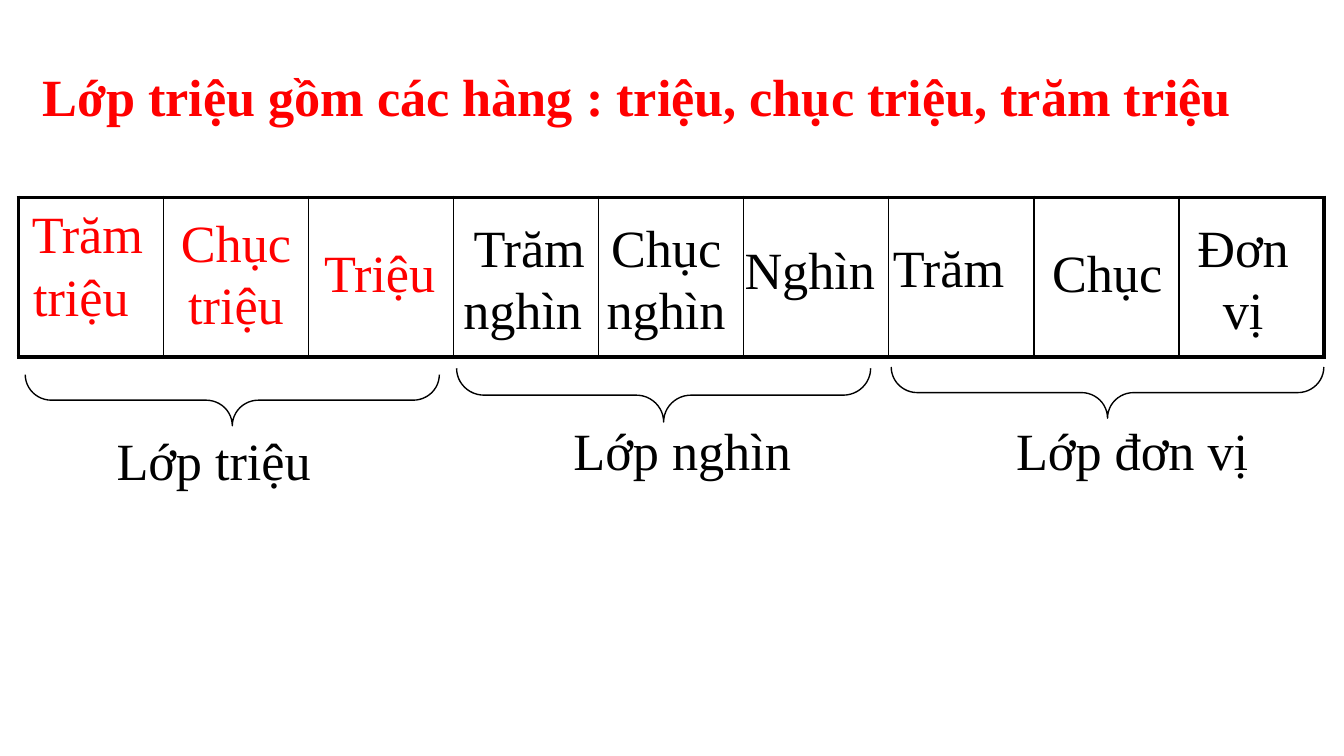
from lxml import etree
from pptx import Presentation, util as u
from pptx.dml.color import RGBColor
from pptx.enum import shapes, text
from pptx.oxml import ns

PX = 5715  # EMU per px, 160 px to the inch
FONT = "Times New Roman"
COLORS = {"highlight": "FF0000", "ink": "000000"}
LINE_HEIGHT, TWO_LINES = 91, 166


def px(*lengths):
    return [u.Emu(length * PX) for length in lengths]


def add_words(slide, box, words, color="ink", bold=False, align=text.PP_ALIGN.LEFT):
    frame = slide.shapes.add_textbox(*px(*box)).text_frame
    frame.word_wrap = True
    frame.auto_size = text.MSO_AUTO_SIZE.SHAPE_TO_FIT_TEXT
    paragraph = frame.paragraphs[0]
    paragraph.text = words
    paragraph.alignment = align
    paragraph.font.name = FONT
    paragraph.font.size = u.Pt(28)
    paragraph.font.bold = bold
    paragraph.font.color.rgb = RGBColor.from_string(COLORS[color])


def set_border(cell, side, points):
    border = etree.SubElement(cell._tc.get_or_add_tcPr(), ns.qn(f"a:ln{side}"),
                              w=str(u.Pt(points)))
    fill = etree.SubElement(border, ns.qn("a:solidFill"))
    etree.SubElement(fill, ns.qn("a:srgbClr"), val=COLORS["ink"])


def place_value_table(slide, box, headings):
    left, top, width, height = box
    count = len(headings)
    # Columns share the table width equally
    table = slide.shapes.add_table(1, count, *px(*box)).table
    table.first_row = table.horz_banding = False

    # Thick outer frame, thin inner dividers
    for index in range(count):
        cell = table.cell(0, index)
        set_border(cell, "L", 2.25 if index == 0 else 1)
        set_border(cell, "R", 2.25 if index == count - 1 else 1)
        set_border(cell, "T", 2.25)
        set_border(cell, "B", 2.25)
        cell.fill.background()

    # Headings lie over the cells
    for words, dx, dy, heading_width, heading_height, color in headings:
        add_words(slide, (left + dx, top + dy, heading_width, heading_height),
                  words, color, align=text.PP_ALIGN.CENTER)


def class_group(slide, box, words, label_dx, label_dy):
    left, top, width, height = box
    # The brace stands upright before its quarter turn, around the same centre
    shift = (width - height) // 2
    brace = slide.shapes.add_shape(shapes.MSO_SHAPE.RIGHT_BRACE,
                                   *px(left + shift, top - shift, height, width))
    brace.rotation = 90
    brace.adjustments[0] = 0.51
    brace.adjustments[1] = 0.5
    brace.shadow.inherit = False
    brace.fill.background()
    brace.line.color.rgb = RGBColor.from_string(COLORS["ink"])
    brace.line.width = u.Pt(0.75)
    add_words(slide, (left + label_dx, top + label_dy, 317, LINE_HEIGHT), words)


def main():
    deck = Presentation()
    deck.slide_width, deck.slide_height = px(1600, 900)
    slide = deck.slides.add_slide(deck.slide_layouts[6])

    # Title
    add_words(slide, (35, 69, 1485, LINE_HEIGHT),
              "Lớp triệu gồm các hàng : triệu, chục triệu, trăm triệu",
              "highlight", bold=True)

    # Place values: words, offset from the table, size, colour
    place_value_table(slide, (22, 235, 1554, 190), [
        ("Trăm triệu ", -51, -3, 266, TWO_LINES, "highlight"),
        ("Chục triệu", 159, 7, 200, TWO_LINES, "highlight"),
        ("Triệu", 330, 43, 200, LINE_HEIGHT, "highlight"),
        ("Trăm nghìn ", 508, 13, 200, TWO_LINES, "ink"),
        ("Chục nghìn", 671, 13, 200, TWO_LINES, "ink"),
        ("Nghìn", 842, 40, 200, LINE_HEIGHT, "ink"),
        ("Trăm ", 1015, 37, 200, LINE_HEIGHT, "ink"),
        ("Chục", 1196, 43, 200, LINE_HEIGHT, "ink"),
        ("Đơn vị", 1375, 13, 166, TWO_LINES, "ink"),
    ])

    # Classes of three places: brace box, words, label offset
    class_group(slide, (30, 446, 493, 61), "Lớp triệu", 93, 56)
    class_group(slide, (544, 438, 493, 64), "Lớp nghìn", 123, 52)
    class_group(slide, (1061, 437, 515, 61), "Lớp đơn vị", 133, 53)

    deck.save("out.pptx")


if __name__ == "__main__":
    main()
